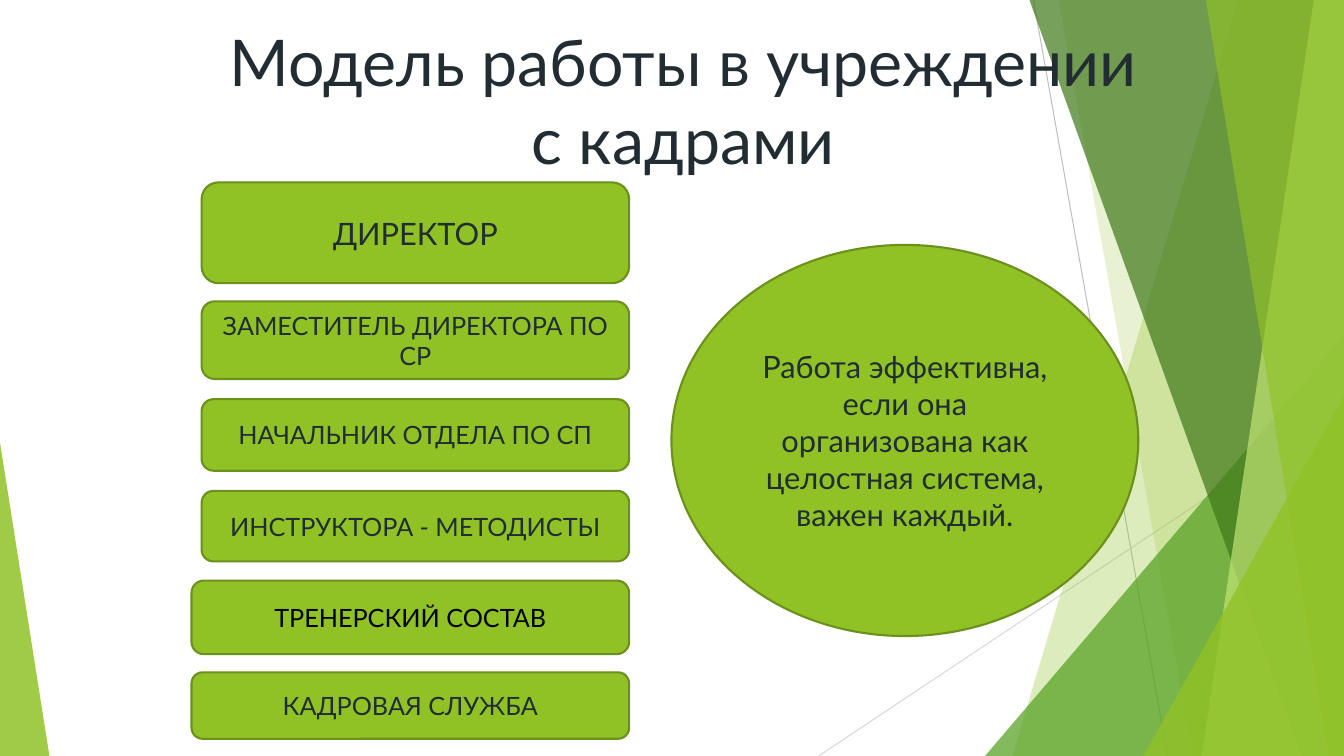
from lxml import etree
from pptx import Presentation
from pptx.dml.color import RGBColor
from pptx.enum.shapes import MSO_CONNECTOR, MSO_SHAPE
from pptx.enum.text import MSO_ANCHOR as Anchor, PP_ALIGN as Align
from pptx.oxml.ns import qn
from pptx.util import Inches, Pt

WIDTH, HEIGHT = 13.33, 7.5
GREEN, OUTLINE, INK = "90C226", "6B901C", "212D32"


def color(value):
    return RGBColor.from_string(value)


class SlideBuilder:
    """Draws styled elements on one slide."""

    font = "Lato"

    def __init__(self, slide):
        self.slide = slide
        self.shapes = slide.shapes

    def line(self, start, end, line_color):
        points = [Inches(value) for value in (*start, *end)]
        connector = self.shapes.add_connector(MSO_CONNECTOR.STRAIGHT, *points)
        connector.line.color.rgb = color(line_color)
        connector.line.width = Pt(0.75)
        etree.SubElement(connector.element.spPr, qn("a:effectLst"))

    def tint(self, shape, fill, opacity):
        shape.shadow.inherit = False
        shape.fill.solid()
        shape.fill.fore_color.rgb = color(fill)
        shape.line.fill.background()
        solid = shape.element.spPr.find(qn("a:solidFill"))
        alpha = etree.SubElement(solid.find(qn("a:srgbClr")), qn("a:alpha"))
        alpha.set("val", str(opacity * 1000))

    def band(self, top_left, bottom_left, fill, opacity):
        corners = [(top_left, 0), (WIDTH, 0), (WIDTH, HEIGHT), (bottom_left, HEIGHT)]
        points = [(Inches(x), Inches(y)) for x, y in corners]
        builder = self.shapes.build_freeform(*points[0])
        builder.add_line_segments(points[1:], close=True)
        self.tint(builder.convert_to_shape(), fill, opacity)

    def corner(self, left, top, width, apex, fill, opacity):
        box = [Inches(value) for value in (left, top, width, HEIGHT - top)]
        shape = self.shapes.add_shape(MSO_SHAPE.ISOSCELES_TRIANGLE, *box)
        shape.adjustments[0] = apex
        self.tint(shape, fill, opacity)

    def label(self, shape, text, size, text_color):
        frame = shape.text_frame
        frame.word_wrap = True
        frame.vertical_anchor = Anchor.MIDDLE
        paragraph = frame.paragraphs[0]
        paragraph.text = text
        paragraph.alignment = Align.CENTER
        for run in paragraph.runs:
            run.font.name = self.font
            run.font.size = Pt(size)
            run.font.color.rgb = color(text_color)

    def title(self, box, text):
        shape = self.shapes.add_textbox(*[Inches(value) for value in box])
        self.label(shape, text, 46, INK)

    def node(self, kind, box, text, size, text_color=INK):
        shape = self.shapes.add_shape(kind, *[Inches(value) for value in box])
        shape.shadow.inherit = False
        shape.fill.solid()
        shape.fill.fore_color.rgb = color(GREEN)
        shape.line.color.rgb = color(OUTLINE)
        shape.line.width = Pt(1.5)
        self.label(shape, text, size, text_color)


def main():
    presentation = Presentation()
    presentation.slide_width = Inches(WIDTH)
    presentation.slide_height = Inches(HEIGHT)
    builder = SlideBuilder(presentation.slides.add_slide(presentation.slide_layouts[6]))

    builder.line((10.25, 0), (11.58, HEIGHT), "BFBFBF")
    builder.line((WIDTH, 4.03), (8.12, HEIGHT), "D9D9D9")
    builder.band(12.28, 10.04, GREEN, 30)
    builder.band(10.5, 11.83, GREEN, 20)
    builder.corner(9.77, 3.33, 3.56, 1, "54A021", 72)
    builder.band(10.21, 12.91, "3F7819", 70)
    builder.band(13.03, 11.92, "C0E474", 70)
    builder.band(11.96, 13.18, GREEN, 65)
    builder.corner(11.34, 3.93, 1.99, 1, GREEN, 80)
    builder.corner(0, 4.39, 0.49, 0, GREEN, 85)

    builder.title((0.6, 0.17, 12.35, 1.64), "Модель работы в учреждении\nс кадрами")

    staff_right = 6.24
    staff = [
        ("ДИРЕКТОР", 2, 1.81, 1, 22, INK),
        ("ЗАМЕСТИТЕЛЬ ДИРЕКТОРА ПО СР", 2, 2.99, 0.77, 18, INK),
        ("НАЧАЛЬНИК ОТДЕЛА ПО СП", 2, 3.96, 0.71, 18, INK),
        ("ИНСТРУКТОРА - МЕТОДИСТЫ", 2, 4.87, 0.7, 18, INK),
        ("ТРЕНЕРСКИЙ СОСТАВ", 1.9, 5.76, 0.73, 18, "000000"),
        ("КАДРОВАЯ СЛУЖБА", 1.9, 6.67, 0.66, 18, INK),
    ]
    for text, left, top, height, size, text_color in staff:
        box = (left, top, staff_right - left, height)
        builder.node(MSO_SHAPE.ROUNDED_RECTANGLE, box, text, size, text_color)

    builder.node(
        MSO_SHAPE.OVAL,
        (6.66, 2.43, 4.63, 3.88),
        "Работа эффективна, если она организована как целостная система, важен каждый.",
        22,
    )
    presentation.save("out.pptx")


if __name__ == "__main__":
    main()
